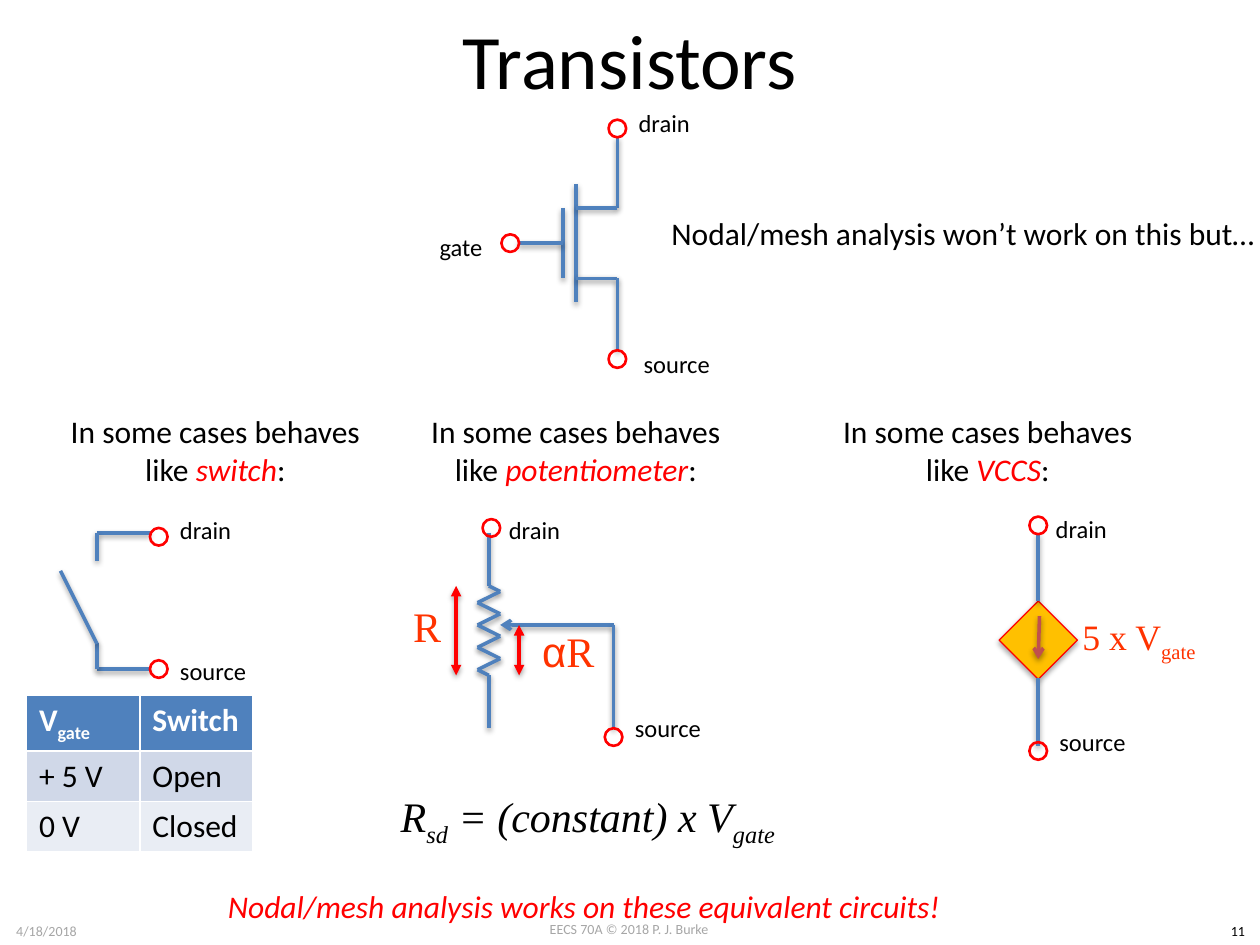
from lxml import etree
from pptx import Presentation
from pptx.dml.color import RGBColor
from pptx.enum.shapes import MSO_CONNECTOR, MSO_SHAPE
from pptx.enum.text import MSO_ANCHOR, PP_ALIGN
from pptx.oxml.ns import qn
from pptx.util import Inches, Pt

LINE = MSO_CONNECTOR.STRAIGHT
OVAL, RECT = MSO_SHAPE.OVAL, MSO_SHAPE.RECTANGLE
LEFT, CENTER = PP_ALIGN.LEFT, PP_ALIGN.CENTER
TOP, MIDDLE = MSO_ANCHOR.TOP, MSO_ANCHOR.MIDDLE

BLACK = RGBColor(0x00, 0x00, 0x00)
WHITE = RGBColor(0xFF, 0xFF, 0xFF)
GRAY = RGBColor(0xA6, 0xA6, 0xA6)
BLUE = RGBColor(0x4F, 0x81, 0xBD)
RED = RGBColor(0xFF, 0x00, 0x00)
ORANGE = RGBColor(0xFF, 0x33, 0x00)
BRICK = RGBColor(0xC0, 0x50, 0x4D)
GOLD = RGBColor(0xFF, 0xC0, 0x00)
BAND_1 = RGBColor(0xD0, 0xD8, 0xE8)
BAND_2 = RGBColor(0xE9, 0xED, 0xF4)

SANS, SERIF, GREEK = "Calibri", "Times New Roman", "Arial"
COLS, ROWS = 100, 75
LABEL_W = {"drain": 6.1, "source": 7.3, "gate": 5.5}
RADIUS = 0.7


def grid(*values):
    """Turn grid columns or rows into lengths."""
    return [Inches(v * 10 / COLS) for v in values]


def fill_paragraph(p, runs, size, color=BLACK, face=SANS, align=LEFT, bold=False, italic=False):
    """Write (text, role) runs; roles are sub, key and alpha."""
    p.alignment = align
    p.font.size, p.font.name, p.font.color.rgb = Pt(size), face, color
    p.font.bold, p.font.italic = bold, italic
    for text, role in runs:
        r = p.add_run()
        r.text = text
        if role == "sub":
            r._r.get_or_add_rPr().set("baseline", "-25000")
        elif role == "key":
            r.font.italic, r.font.color.rgb = True, RED
        elif role == "alpha":
            r.font.name = GREEK


def add_text(s, box, place, runs, size, wrap=True, anchor=TOP, **style):
    """Add a text box at a place relative to the box."""
    x, y, w, h = place
    tf = s.shapes.add_textbox(*grid(box[0] + x, box[1] + y, w, h)).text_frame
    tf.word_wrap, tf.vertical_anchor = wrap, anchor
    runs = [(runs, "")] if isinstance(runs, str) else runs
    fill_paragraph(tf.paragraphs[0], runs, size, **style)


def add_shadow(sp, alpha):
    """Give a shape a soft shadow straight below it."""
    effects = etree.SubElement(sp._element.spPr, qn("a:effectLst"))
    shadow = etree.SubElement(effects, qn("a:outerShdw"), blurRad="40000",
                              dist="20000", dir="5400000", rotWithShape="0")
    black = etree.SubElement(shadow, qn("a:srgbClr"), val="000000")
    etree.SubElement(black, qn("a:alpha"), val=str(alpha * 1000))


def add_wire(s, box, points, color=BLUE, head=None, tail=None):
    """Join successive points with straight connectors."""
    for (x1, y1), (x2, y2) in zip(points, points[1:]):
        sp = s.shapes.add_connector(LINE, *grid(box[0] + x1, box[1] + y1,
                                                box[0] + x2, box[1] + y2))
        sp.line.color.rgb, sp.line.width = color, Pt(2)
        for tag, kind in (("a:headEnd", head), ("a:tailEnd", tail)):
            if kind:
                etree.SubElement(sp.line._get_or_add_ln(), qn(tag), type=kind)
        add_shadow(sp, 38)


def add_terminal(s, box, x, y, name, dx, dy):
    """Add a ring centred on a point and its label."""
    sp = s.shapes.add_shape(OVAL, *grid(box[0] + x - RADIUS, box[1] + y - RADIUS,
                                        2 * RADIUS, 2 * RADIUS))
    sp.shadow.inherit = False
    sp.fill.background()
    sp.line.color.rgb, sp.line.width = RED, Pt(1.5)
    add_text(s, box, (x + dx, y + dy, LABEL_W[name], 3.4), name, 14, wrap=False)


def add_heading(s, box, device):
    """Add the heading of an equivalent circuit."""
    runs = [("In some cases behaves like ", ""), (device, "key"), (":", "")]
    add_text(s, box, (0, 0, 28.6, 7.1), runs, 18, align=CENTER)


def add_transistor(s, box):
    """Draw the transistor symbol and its remark."""
    for points in ([(11.7, 8.5), (11.7, 14.1)], [(12.7, 6.6), (12.7, 16)],
                   [(11.7, 11.3), (8.1, 11.3)],
                   [(16, 2.9), (16, 8.5), (12.7, 8.5)],
                   [(12.7, 14.1), (16, 14.1), (16, 19.8)]):
        add_wire(s, box, points)
    add_terminal(s, box, 16, 2.2, "drain", 0.7, -2.1)
    add_terminal(s, box, 16, 20.5, "source", 1.1, -1.3)
    add_terminal(s, box, 7.5, 11.3, "gate", -6.6, -1.4)
    add_text(s, box, (19.3, 8.5, 48.8, 4),
             "Nodal/mesh analysis won’t work on this but…", 18, wrap=False)


def add_switch_table(s, box):
    """Add the table of gate voltage and switch state."""
    table = s.shapes.add_table(3, 2, *grid(*box, 18, 12)).table
    rows = (([("V", ""), ("gate", "sub")], [("Switch", "")]),
            ([("+ 5 V", "")], [("Open", "")]),
            ([("0 V", "")], [("Closed", "")]))
    for i, (row, color) in enumerate(zip(rows, (BLUE, BAND_1, BAND_2))):
        for j, runs in enumerate(row):
            cell = table.cell(i, j)
            cell.fill.solid()
            cell.fill.fore_color.rgb = color
            fill_paragraph(cell.text_frame.paragraphs[0], runs, 18,
                           color=BLACK if i else WHITE, bold=i == 0)


def add_switch(s, box):
    """Draw the switch circuit above its table."""
    add_heading(s, box, "switch")
    for points in ([(9.1, 10.1), (4.9, 10.1), (4.9, 12.3)],
                   [(9.1, 20.9), (4.9, 20.9), (4.9, 18.8)],
                   [(4.9, 18.9), (2, 13.1)]):
        add_wire(s, box, points)
    add_terminal(s, box, 9.8, 10.4, "drain", 0.7, -2.2)
    add_terminal(s, box, 9.8, 20.9, "source", 0.7, -1.5)
    add_switch_table(s, (box[0] - 0.7, box[1] + 23))


def add_potentiometer(s, box):
    """Draw the potentiometer circuit above its formula."""
    add_heading(s, box, "potentiometer")
    x, top, bottom, teeth = 7.4, 14.3, 21.4, 8
    step = (bottom - top) / teeth
    zigzag = [(x + 0.9 * (-1) ** i, top + step * (i + 0.5)) for i in range(teeth)]
    add_wire(s, box, [(x, 10.1), (x, top), *zigzag, (x, bottom), (x, 25.6)])
    add_wire(s, box, [(17.3, 17.4), (8.3, 17.4)], tail="arrow")
    add_wire(s, box, [(17.3, 17.4), (17.3, 25.6)])
    for points in ([(4.8, top), (4.8, bottom)], [(9.8, 17.4), (9.8, bottom)]):
        add_wire(s, box, points, RED, "triangle", "triangle")
    add_terminal(s, box, 7.6, 9.7, "drain", 0.4, -1.5)
    add_terminal(s, box, 17.3, 26.3, "source", 0.7, -2.4)
    style = dict(anchor=MIDDLE, face=SERIF, align=CENTER)
    add_text(s, box, (-4.7, 13.8, 14.4, 7.3), "R", 24, color=ORANGE, **style)
    add_text(s, box, (6.5, 15.8, 14.4, 7.3), [("α", "alpha"), ("R", "")], 24,
             color=ORANGE, **style)
    formula = [("R", ""), ("sd", "sub"), (" = (constant) x V", ""), ("gate", "sub")]
    add_text(s, box, (-2.2, 29.2, 34.9, 7.3), formula, 24, italic=True, **style)


def add_current_source(s, box):
    """Draw the voltage controlled current source."""
    add_heading(s, box, "VCCS")
    sp = s.shapes.add_shape(RECT, *grid(box[0] + 16.1, box[1] + 16.4, 4.4, 4.4))
    sp.rotation = 225
    sp.fill.solid()
    sp.fill.fore_color.rgb = GOLD
    sp.line.color.rgb, sp.line.width = RED, Pt(0.75)
    add_shadow(sp, 35)
    add_wire(s, box, [(18.3, 21.6), (18.3, 27)])
    add_wire(s, box, [(18.3, 10.1), (18.3, 15.5)])
    add_wire(s, box, [(18.4, 16.7), (18.3, 20.1)], BRICK, tail="arrow")
    add_terminal(s, box, 18.3, 9.5, "drain", 0.4, -1.4)
    add_terminal(s, box, 18.3, 27.4, "source", 0.7, -2.4)
    add_text(s, box, (20.6, 15.6, 11.4, 5.8), [("5 x V", ""), ("gate", "sub")], 20.4,
             anchor=MIDDLE, color=ORANGE, face=SERIF, align=CENTER)


def add_footer(s, box):
    """Add the date, course and slide number."""
    for x, y, w, text, color in ((0, 0.1, 7.4, "4/18/2018", GRAY),
                                 (38.3, 0, 23.3, "EECS 70A © 2018 P. J. Burke", GRAY),
                                 (96.5, 0.1, 3.5, "11", BLACK)):
        add_text(s, box, (x, y, w, 2.4), text, 8, color=color, align=CENTER)


def main():
    """Build the slide and save it."""
    prs = Presentation()
    prs.slide_width, prs.slide_height = grid(COLS, ROWS)
    s = prs.slides.add_slide(prs.slide_layouts[6])
    add_footer(s, (0, 72.6))
    add_text(s, (5, -0.2), (0, 0, 90, 9.7), "Transistors", 44, anchor=MIDDLE, align=CENTER)
    add_transistor(s, (33, 8))
    add_switch(s, (2.8, 32.2))
    add_potentiometer(s, (31.4, 32.2))
    add_current_source(s, (64.1, 32.2))
    add_text(s, (17.1, 69.9), (0, 0, 59.2, 4),
             "Nodal/mesh analysis works on these equivalent circuits!", 18,
             wrap=False, color=RED, italic=True)
    prs.save("out.pptx")


if __name__ == "__main__":
    main()
